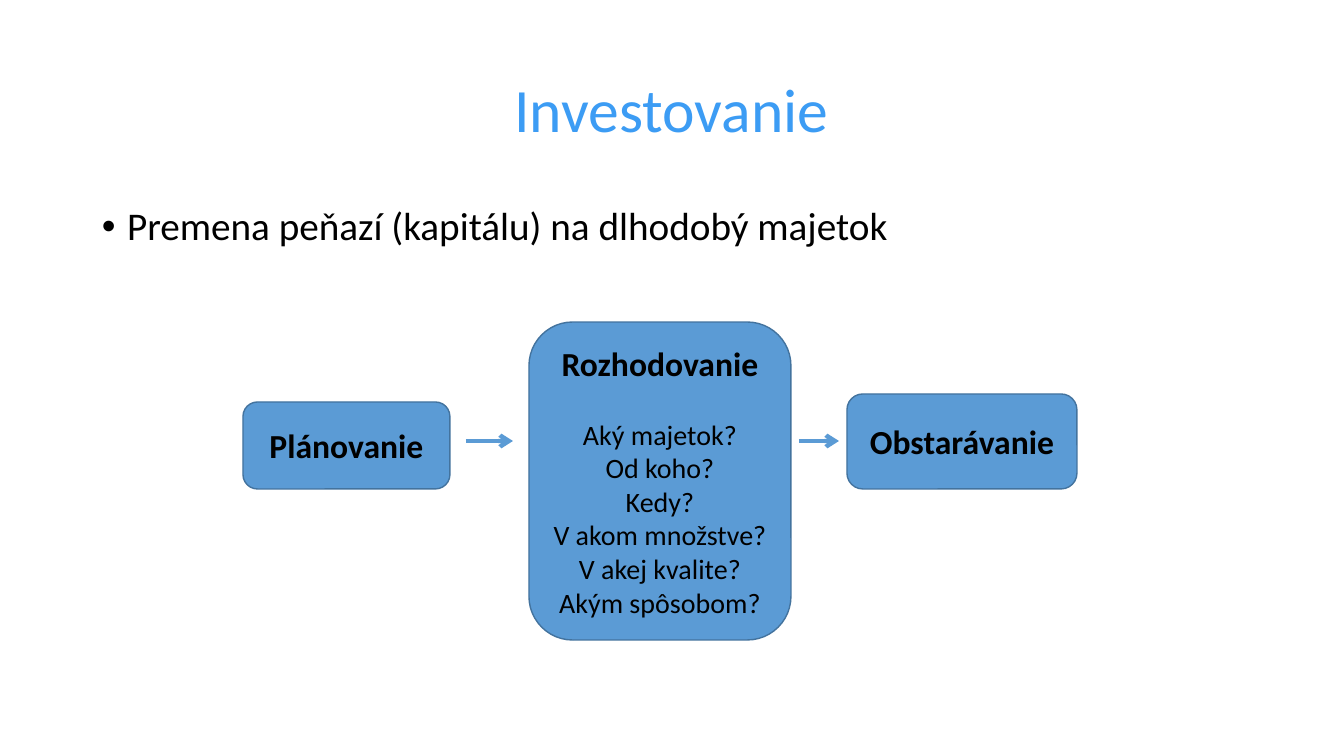
from lxml import etree
from pptx import Presentation
from pptx import util as u
from pptx.dml.color import RGBColor
from pptx.enum import shapes, text
from pptx.oxml.ns import qn

SCALE = 914400 / 100.8
THEME = {
    "font": "Calibri",
    "title": RGBColor.from_string("3C9CF4"),
    "ink": RGBColor.from_string("000000"),
    "fill": RGBColor.from_string("5B9BD5"),
    "outline": RGBColor.from_string("43739E"),
    "title_size": 44,
    "body_size": 28,
    "step_size": 24,
    "question_size": 20,
}


def px(*lengths):
    return [u.Emu(round(length * SCALE)) for length in lengths]


def style(para, size, color, align, bold=False):
    para.alignment = align
    para.font.name = THEME["font"]
    para.font.size = u.Pt(size)
    para.font.color.rgb = color
    para.font.bold = bold


deck = Presentation()
deck.slide_width, deck.slide_height = px(1344, 756)
page = deck.slides.add_slide(deck.slide_layouts[5])

title = page.shapes.title
title.left, title.top, title.width, title.height = px(92, 40, 1159, 146)
title.text_frame.text = "Investovanie"
title.text_frame.vertical_anchor = text.MSO_ANCHOR.MIDDLE
title.text_frame.auto_size = text.MSO_AUTO_SIZE.NONE
para = title.text_frame.paragraphs[0]
style(para, THEME["title_size"], THEME["title"], text.PP_ALIGN.CENTER)
para.line_spacing = 0.9

body = page.shapes.add_textbox(*px(92, 202, 1159, 480))
body.text_frame.word_wrap = True
para = body.text_frame.paragraphs[0]
para.text = "Premena peňazí (kapitálu) na dlhodobý majetok"
style(para, THEME["body_size"], THEME["ink"], text.PP_ALIGN.JUSTIFY)
para.line_spacing = 0.9
para.space_before = u.Pt(10)
properties = para._p.get_or_add_pPr()
properties.set("marL", str(u.Inches(0.25)))
properties.set("indent", str(-u.Inches(0.25)))
etree.SubElement(properties, qn("a:buFont"), typeface="Arial")
etree.SubElement(properties, qn("a:buChar"), char="•")

QUESTIONS = ["Aký majetok?", "Od koho?", "Kedy?", "V akom množstve?", "V akej kvalite?", "Akým spôsobom?"]
STEPS = [
    ("Rozhodovanie", QUESTIONS, (529, 322, 262, 318)),
    ("Plánovanie", [], (243, 402, 207, 87)),
    ("Obstarávanie", [], (847, 394, 230, 95)),
]
for name, questions, bounds in STEPS:
    box = page.shapes.add_shape(shapes.MSO_SHAPE.ROUNDED_RECTANGLE, *px(*bounds))
    box.shadow.inherit = False
    box.fill.solid()
    box.fill.fore_color.rgb = THEME["fill"]
    box.line.color.rgb = THEME["outline"]
    box.line.width = u.Pt(1)
    frame = box.text_frame
    frame.word_wrap = True
    frame.vertical_anchor = text.MSO_ANCHOR.MIDDLE
    heading = frame.paragraphs[0]
    heading.text = name
    style(heading, THEME["step_size"], THEME["ink"], text.PP_ALIGN.CENTER, bold=True)
    if questions:
        heading.space_after = u.Pt(24)
    for question in questions:
        para = frame.add_paragraph()
        para.text = question
        style(para, THEME["question_size"], THEME["ink"], text.PP_ALIGN.CENTER)

ARROW_Y = 441
for start, end in [(466, 513), (799, 839)]:
    arrow = page.shapes.add_connector(shapes.MSO_CONNECTOR.STRAIGHT, *px(start, ARROW_Y, end, ARROW_Y))
    arrow.line.color.rgb = THEME["fill"]
    arrow.line.width = u.Pt(3)
    etree.SubElement(arrow.line._get_or_add_ln(), qn("a:tailEnd"), type="arrow")
    etree.SubElement(arrow._element.spPr, qn("a:effectLst"))

deck.save("out.pptx")
